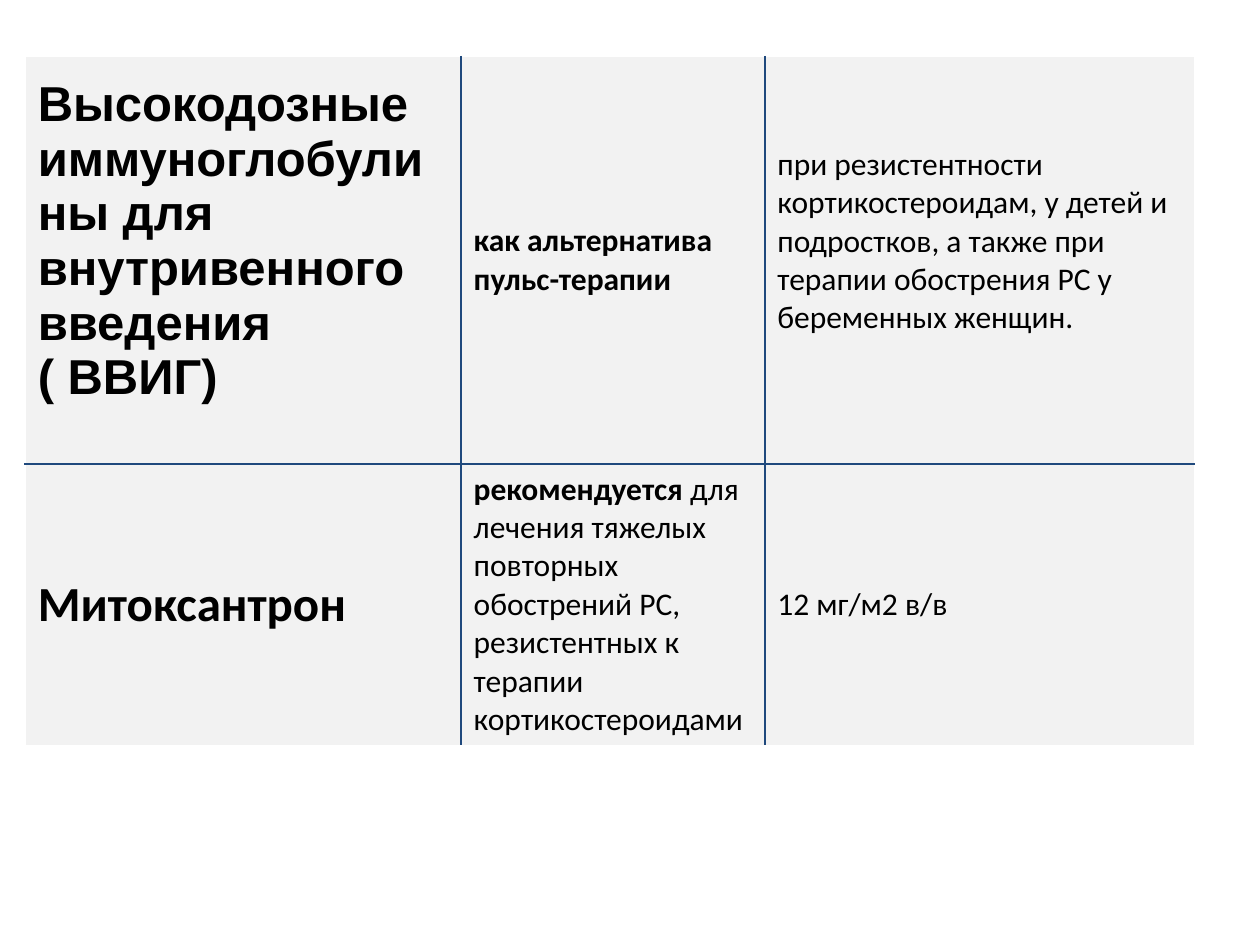
from dataclasses import dataclass

from lxml import etree
from pptx import Presentation
from pptx import util as u
from pptx.dml import color
from pptx.enum import text
from pptx.oxml import ns

COLUMN_WIDTHS = (3.46, 2.41, 3.41)
ROW_HEIGHTS = (3.23, 1.88)
CELL_FILL = "F2F2F2"
OUTER_BORDER = ("FFFFFF", 1)
INNER_BORDER = ("1F497D", 1.5)


@dataclass(frozen=True)
class Run:
    """A piece of text with its own type."""

    text: str
    size: float = 18
    bold: bool = False
    font: str = "Calibri"


@dataclass(frozen=True)
class Entry:
    """The content of one table cell."""

    runs: tuple[Run, ...]
    bottom_margin: float = 0.05


TREATMENTS = (
    (
        Entry((Run("Высокодозные иммуноглобулины для внутривенного введения ( ВВИГ)", 28, True, "Arial"),), 0.35),
        Entry((Run("как альтернатива пульс-терапии", bold=True),)),
        Entry((Run("при резистентности кортикостероидам, у детей и подростков, а также при "
                   "терапии обострения РС у беременных женщин."),), 0.35),
    ),
    (
        Entry((Run("Митоксантрон", 28, True),)),
        Entry((
            Run("рекомендуется", bold=True),
            Run(" для лечения тяжелых повторных обострений РС, резистентных к терапии кортикостероидами"),
        )),
        Entry((Run("12 мг/м2 в/в"),)),
    ),
)


def rgb(value: str) -> color.RGBColor:
    """Turn a hex string into a colour."""
    return color.RGBColor.from_string(value)


def set_borders(cell, row: int, column: int) -> None:
    """Draw blue lines between cells and white lines around the table."""
    on_edge = {
        "lnL": column == 0,
        "lnR": column == len(COLUMN_WIDTHS) - 1,
        "lnT": row == 0,
        "lnB": row == len(ROW_HEIGHTS) - 1,
    }
    properties = cell._tc.get_or_add_tcPr()
    for index, (side, outer) in enumerate(on_edge.items()):
        value, width = OUTER_BORDER if outer else INNER_BORDER
        line = etree.Element(ns.qn(f"a:{side}"), w=str(u.Pt(width)))
        fill = etree.SubElement(line, ns.qn("a:solidFill"))
        etree.SubElement(fill, ns.qn("a:srgbClr"), val=value)
        properties.insert(index, line)


def fill_cell(cell, entry: Entry) -> None:
    """Write the runs of an entry into a filled cell."""
    cell.fill.solid()
    cell.fill.fore_color.rgb = rgb(CELL_FILL)
    cell.vertical_anchor = text.MSO_ANCHOR.MIDDLE
    cell.margin_bottom = u.Inches(entry.bottom_margin)
    paragraph = cell.text_frame.paragraphs[0]
    for item in entry.runs:
        run = paragraph.add_run()
        run.text = item.text
        run.font.name = item.font
        run.font.size = u.Pt(item.size)
        run.font.bold = item.bold
        run.font.color.rgb = rgb("000000")


def add_treatment_table(slide) -> None:
    """Add the table of treatments to the slide."""
    table = slide.shapes.add_table(
        len(ROW_HEIGHTS), len(COLUMN_WIDTHS), u.Inches(0.2), u.Inches(0.45),
        u.Inches(sum(COLUMN_WIDTHS)), u.Inches(sum(ROW_HEIGHTS)),
    ).table
    table.first_row = False
    table.horz_banding = False
    for column, width in zip(table.columns, COLUMN_WIDTHS):
        column.width = u.Inches(width)
    for row, height in zip(table.rows, ROW_HEIGHTS):
        row.height = u.Inches(height)
    for row_index, entries in enumerate(TREATMENTS):
        for column_index, entry in enumerate(entries):
            cell = table.cell(row_index, column_index)
            fill_cell(cell, entry)
            set_borders(cell, row_index, column_index)


def main() -> None:
    """Build and save the presentation."""
    presentation = Presentation()
    presentation.slide_width = u.Inches(10)
    presentation.slide_height = u.Inches(7.5)
    slide = presentation.slides.add_slide(presentation.slide_layouts[6])
    add_treatment_table(slide)
    presentation.save("out.pptx")


if __name__ == "__main__":
    main()
